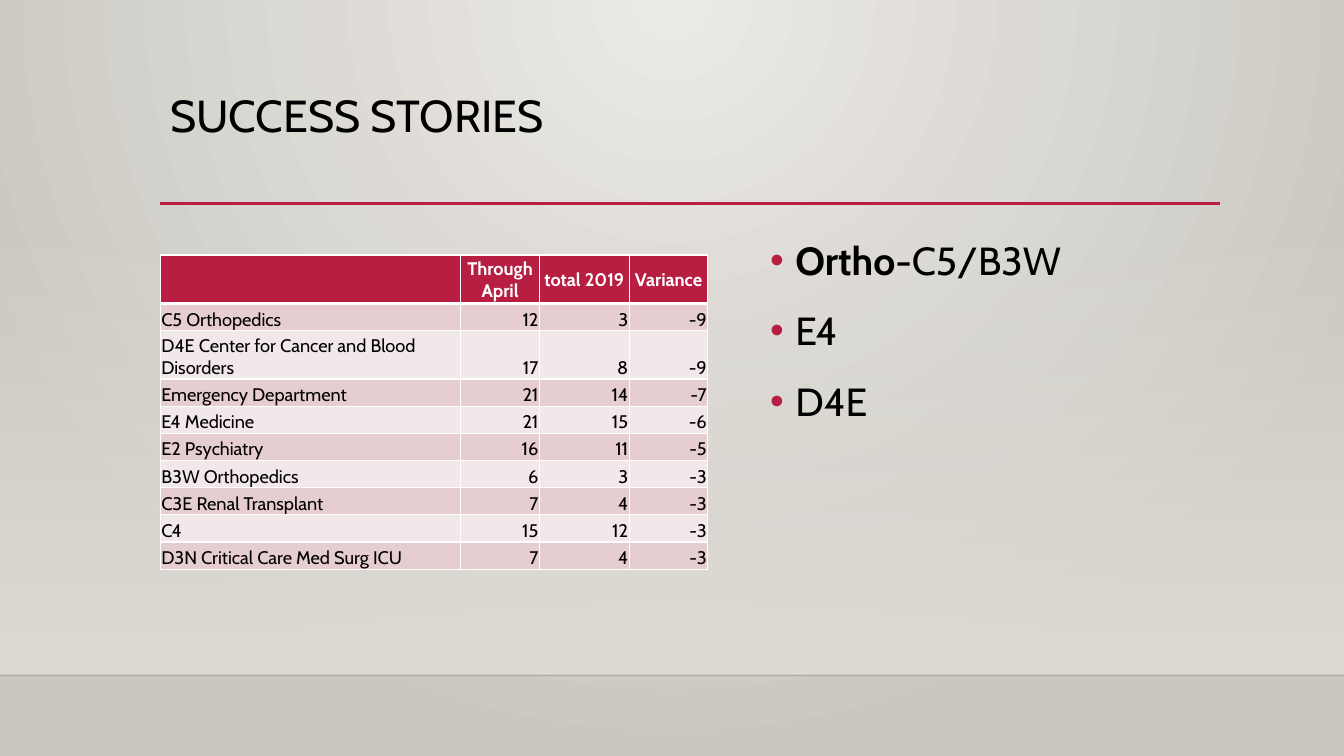
"""Build the "Success Stories" slide with a variance table and a bullet list."""
from lxml import etree
from pptx import Presentation
from pptx.dml.color import RGBColor
from pptx.enum.shapes import MSO_CONNECTOR, MSO_SHAPE
from pptx.enum.text import MSO_ANCHOR, PP_ALIGN
from pptx.oxml import parse_xml
from pptx.oxml.ns import nsdecls, qn
from pptx.util import Inches, Pt

STRAIGHT = MSO_CONNECTOR.STRAIGHT
RECTANGLE = MSO_SHAPE.RECTANGLE
TOP, MIDDLE, BOTTOM = MSO_ANCHOR.TOP, MSO_ANCHOR.MIDDLE, MSO_ANCHOR.BOTTOM
LEFT, CENTER, RIGHT = PP_ALIGN.LEFT, PP_ALIGN.CENTER, PP_ALIGN.RIGHT

FONT = "Cabin"
COLORS = {
    "glow": "ECEAE7",
    "edge": "CAC7C1",
    "wall": "DFDBD5",
    "floor_line": "000001",
    "accent": "B71E42",
    "text": "000000",
    "white": "FFFFFF",
    "band_dark": "E6CDCF",
    "band_light": "F3E8E9",
}
COLUMN_WIDTHS = [2.98, 0.78, 0.89, 0.78]
ROW_HEIGHT, TALL_ROW_HEIGHT = 0.27, 0.48
TALL_ROWS = (0, 2)
TABLE_ROWS = [
    ("", "Through April", "total 2019", "Variance"),
    ("C5 Orthopedics", "12", "3", "-9"),
    ("D4E Center for Cancer and Blood Disorders", "17", "8", "-9"),
    ("Emergency Department", "21", "14", "-7"),
    ("E4 Medicine", "21", "15", "-6"),
    ("E2 Psychiatry", "16", "11", "-5"),
    ("B3W Orthopedics", "6", "3", "-3"),
    ("C3E Renal Transplant", "7", "4", "-3"),
    ("C4", "15", "12", "-3"),
    ("D3N Critical Care Med Surg ICU", "7", "4", "-3"),
]
BULLETS = [
    [("Ortho", True), ("-C5/B3W", False)],
    [("E4", False)],
    [("D4E", False)],
]


def rgb(name):
    """Return the named colour."""
    return RGBColor.from_string(COLORS[name])


def set_gradient(parent, stops, direction):
    """Replace the solid fill of parent with a gradient of (position, colour, alpha)."""
    stop_xml = "".join(
        f'<a:gs pos="{position * 1000}"><a:srgbClr val="{COLORS[color]}">'
        f'<a:alpha val="{alpha * 1000}"/></a:srgbClr></a:gs>'
        for position, color, alpha in stops
    )
    gradient = parse_xml(
        f'<a:gradFill {nsdecls("a")} rotWithShape="1"><a:gsLst>{stop_xml}</a:gsLst>'
        f"{direction}</a:gradFill>"
    )
    parent.replace(parent.find(qn("a:solidFill")), gradient)


def add_background(slide):
    """Give the slide a round glow that starts at the top centre."""
    slide.background.fill.solid()
    direction = (
        '<a:path path="circle">'
        '<a:fillToRect l="43000" t="0" r="43000" b="100000"/></a:path>'
    )
    properties = slide.element.find(".//" + qn("p:bgPr"))
    set_gradient(properties, [(0, "glow", 100), (100, "edge", 100)], direction)


def add_wall(slide):
    """Add the band that fades in towards the floor line."""
    shape = slide.shapes.add_shape(
        RECTANGLE, Inches(0), Inches(2.21), Inches(13.33), Inches(4.49)
    )
    shape.shadow.inherit = False
    shape.line.fill.background()
    shape.fill.solid()
    direction = '<a:lin ang="5400000" scaled="0"/>'
    set_gradient(
        shape.element.spPr, [(0, "wall", 0), (100, "wall", 100)], direction
    )


def add_rule(slide, left, right, y, color, width, alpha=100):
    """Add a horizontal line."""
    line = slide.shapes.add_connector(
        STRAIGHT, Inches(left), Inches(y), Inches(right), Inches(y)
    )
    line.line.width = Pt(width)
    line.line.color.rgb = rgb(color)
    properties = line.element.spPr
    color_element = properties.find(".//" + qn("a:srgbClr"))
    etree.SubElement(color_element, qn("a:alpha"), val=str(alpha * 1000))
    etree.SubElement(properties, qn("a:effectLst"))


def add_run(paragraph, text, size, color="text", bold=False):
    """Add a run of styled text."""
    run = paragraph.add_run()
    run.text = text
    run.font.name = FONT
    run.font.size = Pt(size)
    run.font.bold = bold
    run.font.color.rgb = rgb(color)


def add_text_frame(slide, left, top, width, height):
    """Add a wrapping text box and return its frame."""
    box = slide.shapes.add_textbox(
        Inches(left), Inches(top), Inches(width), Inches(height)
    )
    frame = box.text_frame
    frame.word_wrap = True
    frame.vertical_anchor = TOP
    return frame


def add_title(slide, text):
    """Add the slide title."""
    paragraph = add_text_frame(slide, 1.59, 0.88, 10.5, 1.15).paragraphs[0]
    paragraph.line_spacing = 0.9
    add_run(paragraph, text, 32)


def set_bullet(paragraph):
    """Give the paragraph a hanging accent bullet."""
    properties = paragraph._p.get_or_add_pPr()
    properties.set("marL", str(Inches(0.25)))
    properties.set("indent", str(-Inches(0.25)))
    bullet_color = etree.SubElement(properties, qn("a:buClr"))
    etree.SubElement(bullet_color, qn("a:srgbClr"), val=COLORS["accent"])
    etree.SubElement(properties, qn("a:buFont"), typeface="Arial")
    etree.SubElement(properties, qn("a:buChar"), char="•")


def add_bullets(slide, items):
    """Add the bullet list."""
    frame = add_text_frame(slide, 7.54, 2.2, 4.55, 3.77)
    for index, runs in enumerate(items):
        paragraph = frame.add_paragraph() if index else frame.paragraphs[0]
        set_bullet(paragraph)
        paragraph.line_spacing = 1.2
        if index:
            paragraph.space_before = Pt(10)
        for text, bold in runs:
            add_run(paragraph, text, 28, bold=bold)


def set_borders(cell, top, bottom):
    """Draw white cell borders, 1 pt wide at the sides."""
    properties = cell._tc.get_or_add_tcPr()
    for side, width in (("L", 1), ("R", 1), ("T", top), ("B", bottom)):
        line = etree.SubElement(properties, qn(f"a:ln{side}"), w=str(Pt(width)))
        fill = etree.SubElement(line, qn("a:solidFill"))
        etree.SubElement(fill, qn("a:srgbClr"), val=COLORS["white"])


def fill_cell(cell, text, row, column):
    """Style one table cell and write its text."""
    header = row == 0
    set_borders(cell, top=3 if row == 1 else 1, bottom=3 if header else 1)
    band = "band_dark" if row % 2 else "band_light"
    cell.fill.solid()
    cell.fill.fore_color.rgb = rgb("accent" if header else band)
    cell.margin_left = cell.margin_right = cell.margin_top = Inches(0.01)
    cell.margin_bottom = Inches(0)
    cell.vertical_anchor = MIDDLE if header else BOTTOM
    paragraph = cell.text_frame.paragraphs[0]
    paragraph.alignment = CENTER if header else RIGHT if column else LEFT
    if text:
        add_run(paragraph, text, 13, "white" if header else "text", header)


def add_variance_table(slide, rows):
    """Add the table of units and their variance."""
    heights = [
        TALL_ROW_HEIGHT if row in TALL_ROWS else ROW_HEIGHT
        for row in range(len(rows))
    ]
    table = slide.shapes.add_table(
        len(rows), len(COLUMN_WIDTHS), Inches(1.59), Inches(2.53),
        Inches(sum(COLUMN_WIDTHS)), Inches(sum(heights)),
    ).table
    for column, width in enumerate(COLUMN_WIDTHS):
        table.columns[column].width = Inches(width)
    for row, texts in enumerate(rows):
        table.rows[row].height = Inches(heights[row])
        for column, text in enumerate(texts):
            fill_cell(table.cell(row, column), text, row, column)


def main():
    """Build and save the presentation."""
    presentation = Presentation()
    presentation.slide_width = Inches(13.33)
    presentation.slide_height = Inches(7.5)
    slide = presentation.slides.add_slide(presentation.slide_layouts[6])
    add_background(slide)
    add_wall(slide)
    add_rule(slide, 0, 13.33, 6.7, "floor_line", 1, alpha=20)
    add_rule(slide, 1.59, 12.1, 2.02, "accent", 2.5)
    add_title(slide, "SUCCESS STORIES")
    add_bullets(slide, BULLETS)
    add_variance_table(slide, TABLE_ROWS)
    presentation.save("out.pptx")


if __name__ == "__main__":
    main()
